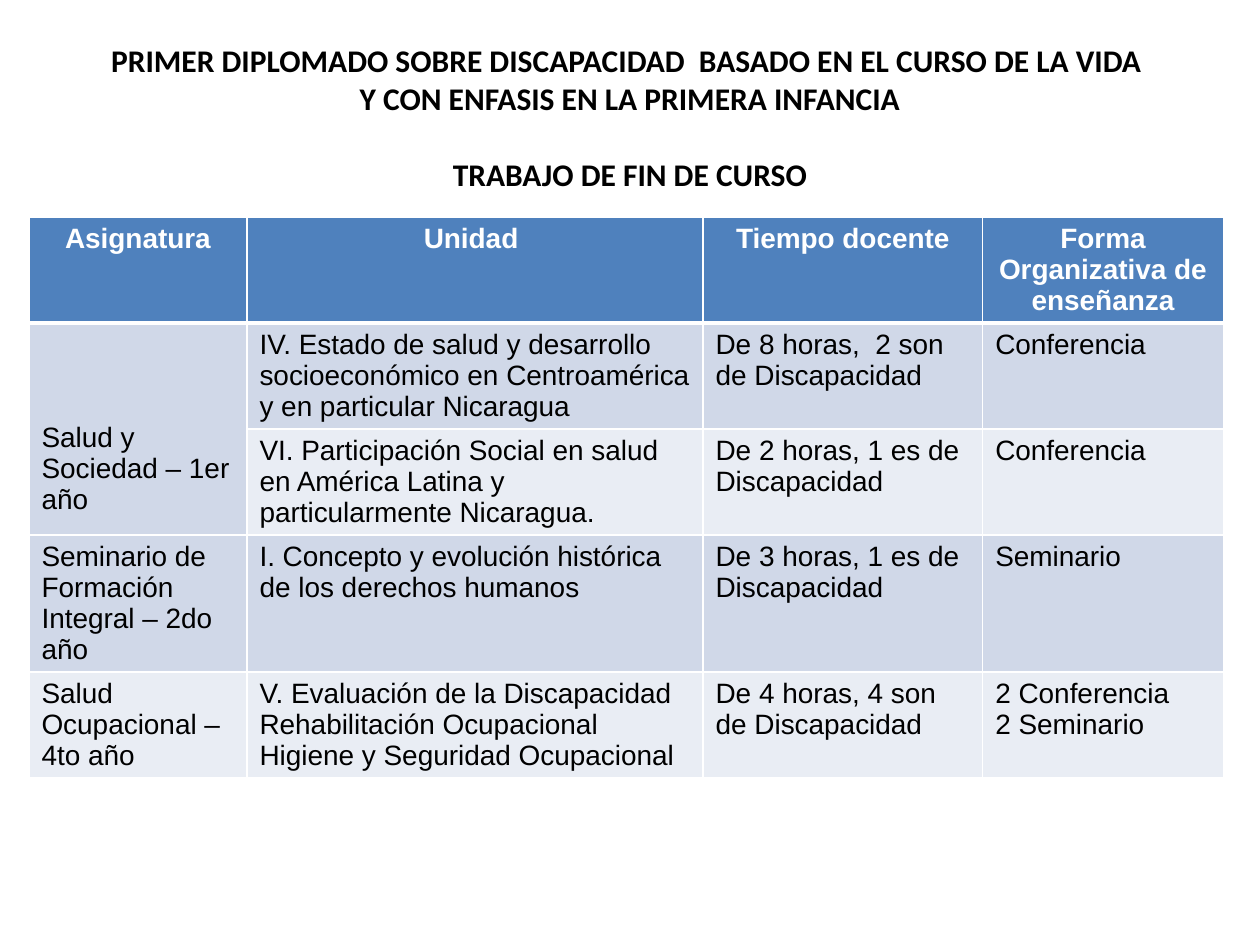
import dataclasses

import pptx
import pptx.dml.color
import pptx.enum.text
import pptx.oxml
import pptx.oxml.ns
import pptx.util

COLORS = {
    "header": "4F81BD",
    "odd": "D0D8E8",
    "even": "E9EDF4",
    "rule": "FFFFFF",
    "header_text": "FFFFFF",
    "text": "000000",
}
SLIDE_WIDTH = pptx.util.Inches(10)
SLIDE_HEIGHT = pptx.util.Inches(7.5)
COLUMN_PERCENTS = (17.3, 36.2, 22.2, 19.1)
ROW_PERCENT = 5.5
THIN, THICK = 1, 3
CENTER = pptx.enum.text.PP_ALIGN.CENTER
LEFT = pptx.enum.text.PP_ALIGN.LEFT


@dataclasses.dataclass(frozen=True)
class Lesson:
    subject: str
    unit: str
    hours: str
    form: str


HEADINGS = Lesson("Asignatura", "Unidad ", "Tiempo docente", "Forma Organizativa de enseñanza")
LESSONS = (
    Lesson(
        "Salud y Sociedad – 1er año",
        "IV. Estado de salud y desarrollo socioeconómico en Centroamérica y en particular Nicaragua",
        "De 8 horas,  2 son de Discapacidad",
        "Conferencia",
    ),
    Lesson(
        "",
        "VI. Participación Social en salud en América Latina y particularmente Nicaragua.",
        "De 2 horas, 1 es de Discapacidad",
        "Conferencia",
    ),
    Lesson(
        "Seminario de Formación Integral – 2do año",
        "I. Concepto y evolución histórica de los derechos humanos",
        "De 3 horas, 1 es de Discapacidad",
        "Seminario",
    ),
    Lesson(
        "Salud Ocupacional – 4to año",
        "V. Evaluación de la Discapacidad\nRehabilitación Ocupacional\nHigiene y Seguridad Ocupacional",
        "De 4 horas, 4 son de Discapacidad",
        "2 Conferencia\n2 Seminario",
    ),
)


def across(percent: float) -> int:
    return round(SLIDE_WIDTH * percent / 100)


def down(percent: float) -> int:
    return round(SLIDE_HEIGHT * percent / 100)


def write_text(frame, text: str, *, size: float, font: str, color: str,
               bold: bool = False, align=LEFT, gap: float = 0) -> None:
    frame.text = text
    for index, paragraph in enumerate(frame.paragraphs):
        paragraph.alignment = align
        paragraph.space_before = pptx.util.Pt(gap if index else 0)
        for run in paragraph.runs:
            run.font.size = pptx.util.Pt(size)
            run.font.name = font
            run.font.bold = bold
            run.font.color.rgb = pptx.dml.color.RGBColor.from_string(COLORS[color])


def set_borders(cell, top: float, bottom: float) -> None:
    properties = cell._tc.get_or_add_tcPr()
    sides = {"lnL": THIN, "lnR": THIN, "lnT": top, "lnB": bottom}
    for position, (side, points) in enumerate(sides.items()):
        properties.insert(position, pptx.oxml.parse_xml(
            f'<a:{side} {pptx.oxml.ns.nsdecls("a")} w="{pptx.util.Pt(points)}">'
            f'<a:solidFill><a:srgbClr val="{COLORS["rule"]}"/></a:solidFill></a:{side}>'
        ))


def draw_title(slide) -> None:
    title = slide.shapes.title
    title.left, title.top = across(5), down(4)
    title.width, title.height = across(90), down(16.7)
    title.text_frame.vertical_anchor = pptx.enum.text.MSO_ANCHOR.MIDDLE
    title.text_frame.auto_size = pptx.enum.text.MSO_AUTO_SIZE.NONE
    write_text(
        title.text_frame,
        "PRIMER DIPLOMADO SOBRE DISCAPACIDAD  BASADO EN EL CURSO DE LA VIDA \v"
        "Y CON ENFASIS EN LA PRIMERA INFANCIA\nTRABAJO DE FIN DE CURSO",
        size=18, font="Calibri", color="text", bold=True, align=CENTER, gap=22,
    )


def draw_lessons(slide) -> None:
    rows = (HEADINGS, *LESSONS)
    height = down(67)
    frame = slide.shapes.add_table(
        len(rows), len(COLUMN_PERCENTS), across(2.3), down(22.95),
        across(sum(COLUMN_PERCENTS)), height,
    )
    table = frame.table
    for column, percent in zip(table.columns, COLUMN_PERCENTS):
        column.width = across(percent)
    for row in table.rows:
        row.height = down(ROW_PERCENT)
    frame.height = height

    for row_index, lesson in enumerate(rows):
        heading = row_index == 0
        band = "header" if heading else "odd" if row_index % 2 else "even"
        for column_index, text in enumerate(dataclasses.astuple(lesson)):
            cell = table.cell(row_index, column_index)
            cell.fill.solid()
            cell.fill.fore_color.rgb = pptx.dml.color.RGBColor.from_string(COLORS[band])
            set_borders(cell, THICK if row_index == 1 else THIN, THICK if heading else THIN)
            write_text(
                cell.text_frame, text, size=16, font="Arial", bold=heading,
                color="header_text" if heading else "text",
                align=CENTER if heading else LEFT,
            )

    first_subject = table.cell(1, 0)
    first_subject.merge(table.cell(2, 0))
    first_subject.margin_top = pptx.util.Inches(0.79)


def main() -> None:
    presentation = pptx.Presentation()
    presentation.slide_width = SLIDE_WIDTH
    presentation.slide_height = SLIDE_HEIGHT
    slide = presentation.slides.add_slide(presentation.slide_layouts.get_by_name("Title Only"))
    draw_lessons(slide)
    draw_title(slide)
    presentation.save("out.pptx")


if __name__ == "__main__":
    main()
